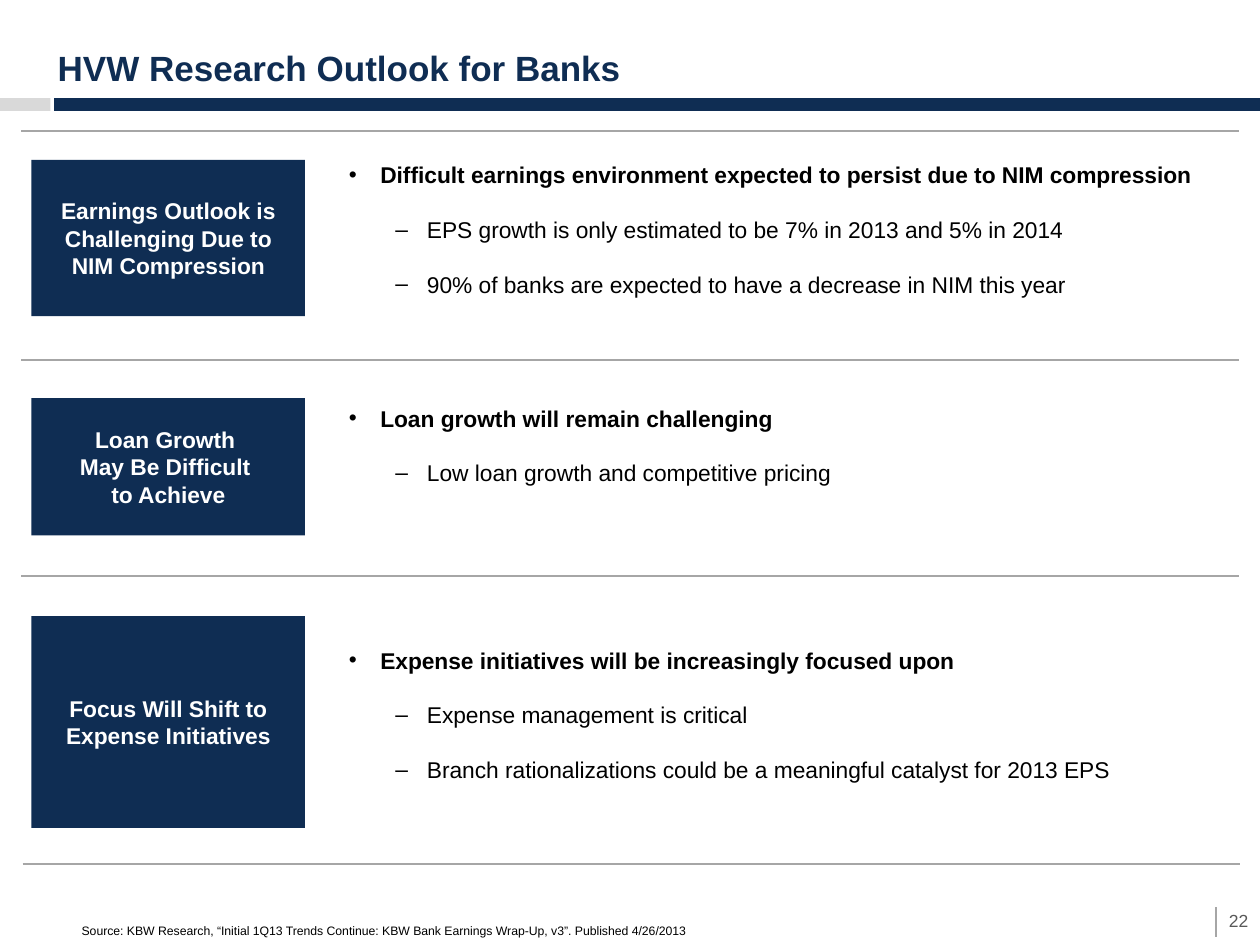
"""Build the bank research outlook slide with three themed sections."""
from lxml.etree import SubElement
from pptx import Presentation
from pptx.dml.color import RGBColor
from pptx.enum.shapes import MSO_CONNECTOR as CONNECTOR, MSO_SHAPE as SHAPE
from pptx.enum.text import MSO_ANCHOR as ANCHOR, PP_ALIGN as ALIGN
from pptx.oxml.ns import qn
from pptx.util import Inches, Pt

COLORS = {"navy": "0F2D53", "light": "D9D9D9", "rule": "A6A6A6",
          "number": "595959", "black": "000000", "white": "FFFFFF"}

SECTIONS = [
    (1.27, 1.24, ["Earnings Outlook is Challenging Due to NIM Compression"], 1.28,
     ["Difficult earnings environment expected to persist due to NIM compression",
      "EPS growth is only estimated to be 7% in 2013 and 5% in 2014",
      "90% of banks are expected to have a decrease in NIM this year"]),
    (3.16, 1.09, ["Loan Growth ", "May Be Difficult ", "to Achieve"], 3.21,
     ["Loan growth will remain challenging",
      "Low loan growth and competitive pricing"]),
    (4.89, 1.68, ["Focus Will Shift to Expense Initiatives"], 5.13,
     ["Expense initiatives will be increasingly focused upon",
      "Expense management is critical",
      "Branch rationalizations could be a meaningful catalyst for 2013 EPS"]),
]

presentation = Presentation()
presentation.slide_width, presentation.slide_height = Inches(10), Inches(7.5)
slide = presentation.slides.add_slide(presentation.slide_layouts[6])


def add_block(left, top, width, height, fill=None):
    box = [Inches(value) for value in (left, top, width, height)]
    if fill is None:
        shape = slide.shapes.add_textbox(*box)
    else:
        shape = slide.shapes.add_shape(SHAPE.RECTANGLE, *box)
        shape.shadow.inherit = False
        shape.fill.solid()
        shape.fill.fore_color.rgb = RGBColor.from_string(COLORS[fill])
        shape.line.fill.background()
    shape.text_frame.word_wrap = True
    return shape


def write(shape, lines, size, color, bold=False, align=ALIGN.LEFT, anchor=ANCHOR.MIDDLE):
    frame = shape.text_frame
    frame.vertical_anchor = anchor
    frame.text = "\n".join(lines)
    for paragraph in frame.paragraphs:
        paragraph.alignment = align
        paragraph.font.name = "Arial"
        paragraph.font.size = Pt(size)
        paragraph.font.bold = bold
        paragraph.font.color.rgb = RGBColor.from_string(COLORS[color])


add_block(0, 0.78, 0.4, 0.1, "light")
add_block(0.43, 0.78, 9.57, 0.1, "navy")
write(add_block(0.36, 0.25, 9, 0.5), ["HVW Research Outlook for Banks"],
      20, "navy", bold=True, anchor=ANCHOR.BOTTOM)

rules = [(0.17, y, 9.83, y) for y in (1.04, 2.86, 4.57)]
rules += [(0.18, 6.86, 9.84, 6.86), (9.65, 7.2, 9.65, 7.44)]
for ends in rules:
    rule = slide.shapes.add_connector(CONNECTOR.STRAIGHT, *[Inches(end) for end in ends])
    rule.line.color.rgb = RGBColor.from_string(COLORS["rule"])
    rule.line.width = Pt(1.25)
    SubElement(rule._element.spPr, qn("a:effectLst"))

for label_top, label_height, label, bullets_top, bullets in SECTIONS:
    write(add_block(0.25, label_top, 2.17, label_height, "navy"), label,
          13, "white", bold=True, align=ALIGN.CENTER)
    body = add_block(2.67, bullets_top, 7.17, 0.42 * len(bullets))
    body.text_frame.margin_top = body.text_frame.margin_bottom = 0
    body.text_frame.text = "\n".join(bullets)
    for index, paragraph in enumerate(body.text_frame.paragraphs):
        properties = paragraph._p.get_or_add_pPr()
        properties.set("marL", str(Inches(0.62 if index else 0.25)))
        properties.set("indent", str(Inches(-0.25)))
        SubElement(properties, qn("a:buFont")).set("typeface", "Arial")
        SubElement(properties, qn("a:buChar")).set("char", "–" if index else "•")
        paragraph.level = min(index, 1)
        paragraph.space_before = Pt(15.6 if index else 0)
        paragraph.font.name = "Arial"
        paragraph.font.size = Pt(13)
        paragraph.font.bold = index == 0
        paragraph.font.color.rgb = RGBColor.from_string(COLORS["black"])

write(add_block(0.55, 7.27, 9, 0.22),
      ["Source: KBW Research, “Initial 1Q13 Trends Continue: KBW Bank Earnings Wrap-Up, v3”. "
       "Published 4/26/2013"], 7, "black", anchor=ANCHOR.BOTTOM)
write(add_block(9.6, 7.11, 0.46, 0.4), ["22"], 10, "number", align=ALIGN.CENTER)

presentation.save("out.pptx")
